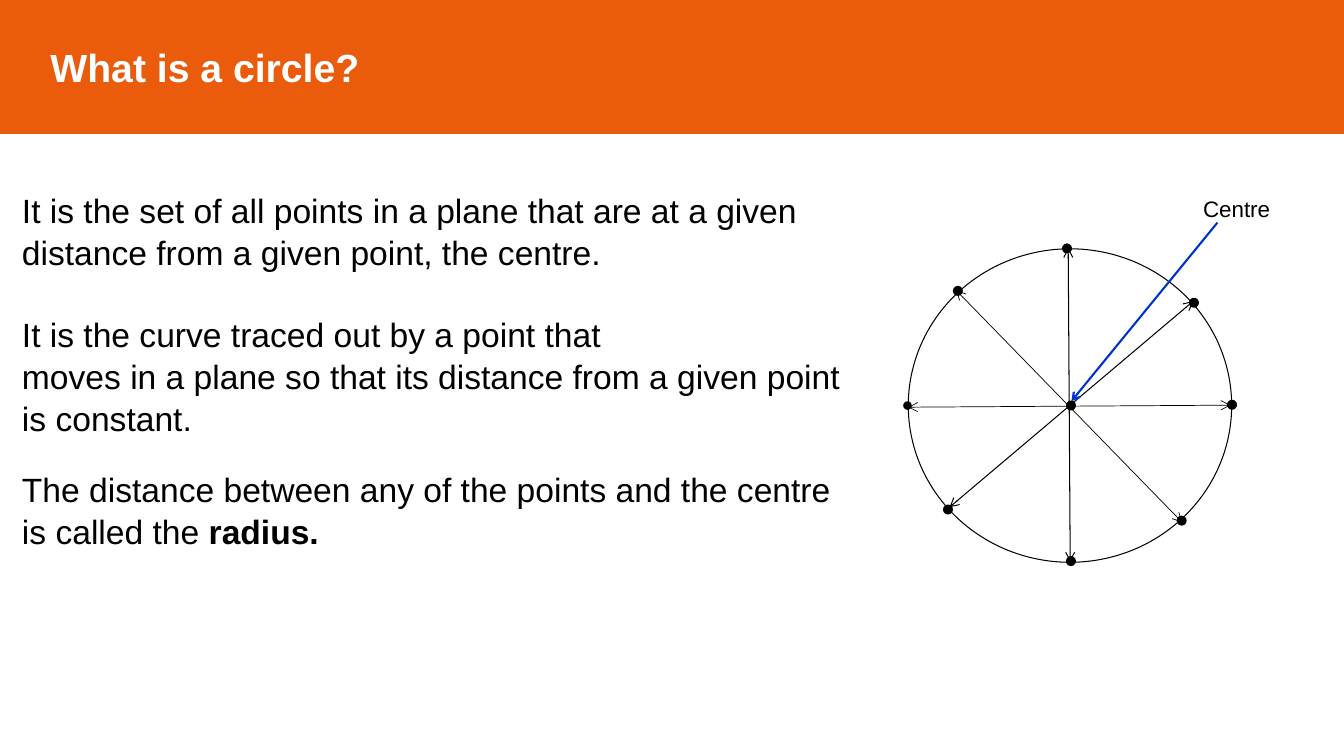
import pptx
import pptx.dml.color
import pptx.enum.shapes
import pptx.enum.text
import pptx.oxml.ns
import pptx.util
from lxml import etree
from pptx.util import Cm

ORANGE, WHITE, BLACK, BLUE = "EA5B0C", "FFFFFF", "000000", "0033CC"


def colour(value):
    return pptx.dml.color.RGBColor.from_string(value)


def add_xml(parent, tag, **attributes):
    return etree.SubElement(parent, pptx.oxml.ns.qn(tag), **attributes)


class Lesson:
    """House style and the slide being filled."""

    font = "Arial"

    def __init__(self, slide):
        self.slide = slide

    def place(self, shape, left, top, width, height):
        shape.left, shape.top = Cm(left), Cm(top)
        shape.width, shape.height = Cm(width), Cm(height)

    def paint(self, shape, fill, line, weight):
        shape.fill.solid()
        shape.fill.fore_color.rgb = colour(fill)
        shape.line.color.rgb = colour(line)
        shape.line.width = pptx.util.Pt(weight)

    def style_font(self, font, size, ink, bold):
        font.name = self.font
        font.size = pptx.util.Pt(size)
        font.bold = bold
        font.color.rgb = colour(ink)

    def set_text(self, shape, text, size, ink=BLACK, bold=False,
                 anchor=pptx.enum.text.MSO_ANCHOR.TOP):
        frame = shape.text_frame
        frame.word_wrap = True
        frame.auto_size = pptx.enum.text.MSO_AUTO_SIZE.NONE
        frame.vertical_anchor = anchor
        paragraph = frame.paragraphs[0]
        paragraph.text = text
        paragraph.alignment = pptx.enum.text.PP_ALIGN.LEFT
        self.style_font(paragraph.font, size, ink, bold)
        return paragraph

    def title(self, text):
        banner = self.slide.shapes.title
        self.place(banner, 0, 0, 33.87, 3.35)
        self.paint(banner, ORANGE, ORANGE, 1)
        self.set_text(banner, text, 28, WHITE, True, pptx.enum.text.MSO_ANCHOR.MIDDLE)
        banner.text_frame.margin_left = Cm(1.27)

    def statement(self, index, top, height, text, key_term=""):
        body = self.slide.placeholders[index]
        self.place(body, 0.3, top, 21.41, height)
        paragraph = self.set_text(body, text, 24)
        paragraph.line_spacing = 1.05
        paragraph.space_before = paragraph.space_after = pptx.util.Pt(6)
        properties = paragraph._p.get_or_add_pPr()
        properties.set("marL", "0")
        properties.set("indent", "0")
        no_bullet = etree.Element(pptx.oxml.ns.qn("a:buNone"))
        properties.find(pptx.oxml.ns.qn("a:defRPr")).addprevious(no_bullet)
        if key_term:
            term = paragraph.add_run()
            term.text = key_term
            term.font.bold = True
        # Runs carry the style too, as definitions mix weights
        for run in paragraph.runs:
            self.style_font(run.font, 24, BLACK, bool(run.font.bold))

    def label(self, text, left, top, width, height):
        box = self.slide.shapes.add_textbox(Cm(left), Cm(top), Cm(width), Cm(height))
        self.set_text(box, text, 16)

    def ellipse(self, shapes, left, top, width, height, fill, weight):
        oval = shapes.add_shape(pptx.enum.shapes.MSO_SHAPE.OVAL,
                                Cm(left), Cm(top), Cm(width), Cm(height))
        oval.shadow.inherit = False
        self.paint(oval, fill, BLACK, weight)

    def arrow(self, shapes, start, end, ink, weight, both_ends=False):
        line = shapes.add_connector(pptx.enum.shapes.MSO_CONNECTOR.STRAIGHT,
                                    *map(Cm, start), *map(Cm, end))
        line.line.color.rgb = colour(ink)
        line.line.width = pptx.util.Pt(weight)
        properties = line._element.spPr
        outline = properties.find(pptx.oxml.ns.qn("a:ln"))
        if both_ends:
            add_xml(outline, "a:headEnd", type="arrow")
        add_xml(outline, "a:tailEnd", type="arrow")
        add_xml(properties, "a:effectLst")

    def remove_empty_placeholders(self):
        for holder in list(self.slide.placeholders):
            if not holder.text_frame.text:
                holder._element.getparent().remove(holder._element)


def main():
    deck = pptx.Presentation()
    deck.slide_width, deck.slide_height = Cm(33.87), Cm(19.05)
    lesson = Lesson(deck.slides.add_slide(deck.slide_layouts.get_by_name("Comparison")))

    # Title and definitions
    lesson.title("What is a circle?")
    lesson.statement(1, 4.6, 3.1, "It is the set of all points in a plane that are at a given\n"
                     "distance from a given point, the centre.")
    lesson.statement(2, 7.72, 3.8, "It is the curve traced out by a point that\n"
                     "moves in a plane so that its distance from a given point is constant.")
    lesson.statement(3, 11.63, 2.6, "The distance between any of the points and the centre "
                     "is called the ", "radius.")
    lesson.remove_empty_placeholders()

    # Circle with its diameters
    diagram = lesson.slide.shapes.add_group_shape().shapes
    lesson.ellipse(diagram, 22.89, 6.27, 8.15, 7.9, WHITE, 0.75)
    diameters = [
        ((26.92, 6.25), (26.97, 14.15), 0.75),
        ((22.89, 10.26), (31.01, 10.21), 0.5),
        ((23.93, 12.78), (30.07, 7.59), 0.75),
        ((24.1, 7.32), (29.79, 13.16), 0.5),
    ]
    for start, end, weight in diameters:
        lesson.arrow(diagram, start, end, BLACK, weight, both_ends=True)

    # Points on the circle, then its centre
    points = [(22.78, 10.13, 1), (30, 7.54, 2), (30.96, 10.11, 2), (26.8, 6.17, 2),
              (29.69, 13.03, 2), (26.9, 14.05, 2), (23.8, 12.75, 2), (24.05, 7.24, 2),
              (26.9, 10.13, 2)]
    for left, top, weight in points:
        lesson.ellipse(diagram, left, top, 0.18, 0.18, BLACK, weight)

    # Pointer to the centre
    lesson.arrow(lesson.slide.shapes, (30.68, 5.61), (27, 10.11), BLUE, 1.5)
    lesson.label("Centre", 30.07, 4.8, 2.51, 0.94)

    deck.save("out.pptx")


if __name__ == "__main__":
    main()
